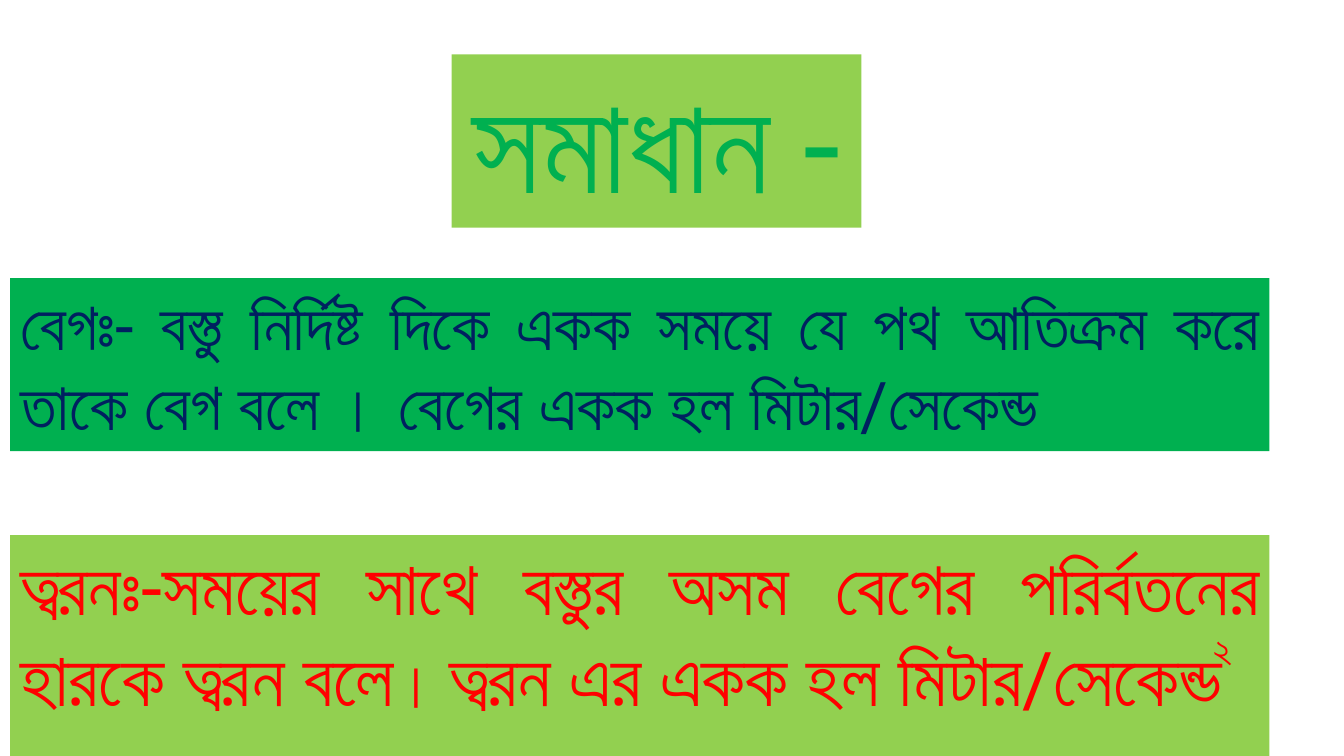
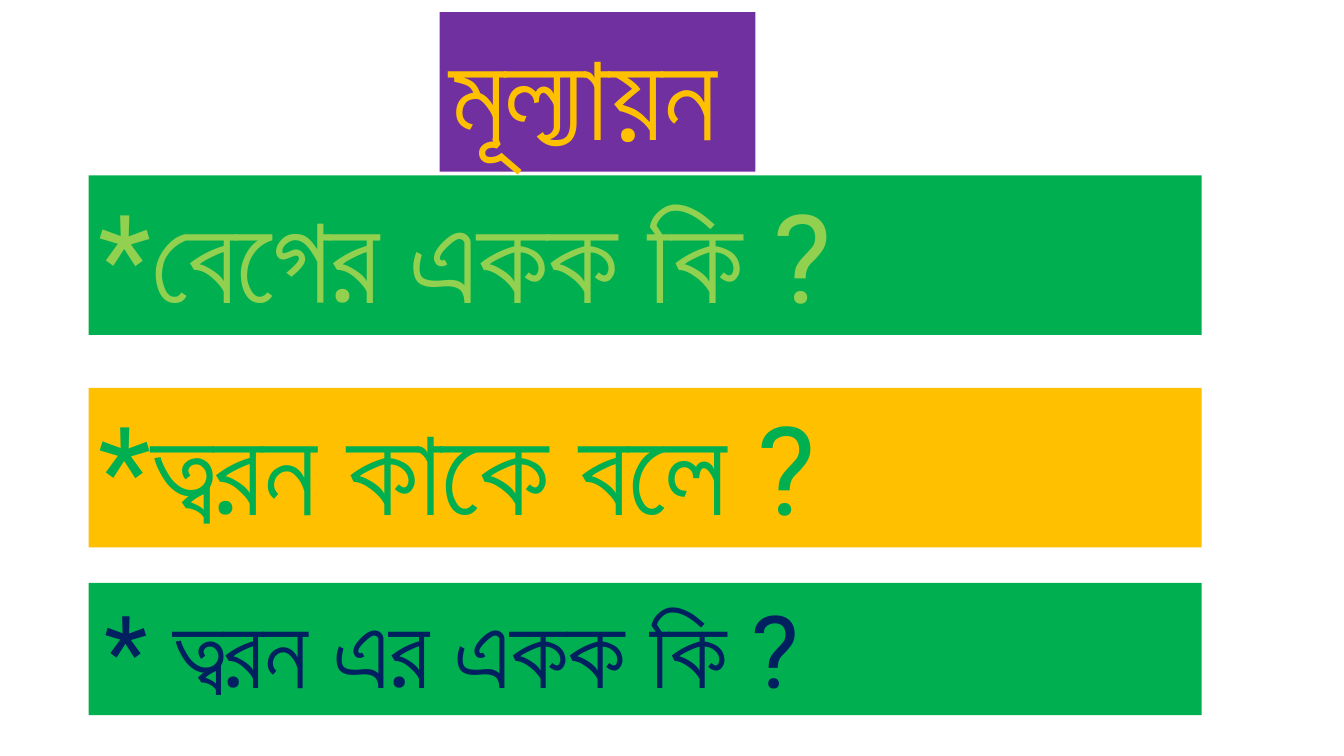
from pptx import Presentation
from pptx.dml.color import RGBColor
from pptx.enum.shapes import MSO_SHAPE
from pptx.enum.text import MSO_ANCHOR, MSO_AUTO_SIZE, PP_ALIGN
from pptx.util import Inches, Pt

RECT = MSO_SHAPE.RECTANGLE
TOP = MSO_ANCHOR.TOP
FIXED = MSO_AUTO_SIZE.NONE
LEFT, MID, FULL = PP_ALIGN.LEFT, PP_ALIGN.CENTER, PP_ALIGN.JUSTIFY

WIDE, HIGH = Inches(13.33), Inches(7.5)
FONT = "Roboto"
TITLE_ONLY = 5
HEX = {
    "lime": "92D050", "green": "00B050", "navy": "002060",
    "red": "FF0000", "plum": "7030A0", "gold": "FFC000",
}


def color(name):
    return RGBColor.from_string(HEX[name])


def area(left, top, width, height):
    """Turn percentages of the slide into lengths."""
    return (int(WIDE * left / 100), int(HIGH * top / 100),
            int(WIDE * width / 100), int(HIGH * height / 100))


def paint(shape, name):
    shape.fill.solid()
    shape.fill.fore_color.rgb = color(name)


def write(shape, parts, ink, align=LEFT, wrap=True, inset=0.1):
    """Fill a shape with one paragraph made of (text, size) parts."""
    frame = shape.text_frame
    frame.auto_size = FIXED
    frame.word_wrap = wrap
    frame.vertical_anchor = TOP
    frame.margin_left, frame.margin_right = Inches(inset), Inches(0.1)
    frame.margin_top = frame.margin_bottom = Inches(0.05)
    para = frame.paragraphs[0]
    para.alignment = align
    para.line_spacing = 1.0
    para.space_before = Pt(0)
    para.font.name = FONT
    para.font.color.rgb = color(ink)
    para.font.size = Pt(parts[0][1])
    for text, size in parts:
        run = para.add_run()
        run.text = text
        if size != parts[0][1]:
            run.font.size = Pt(size)


def head(deck, text, size, box, fill, ink, align):
    """Start a slide with a filled title."""
    slide = deck.slides.add_slide(deck.slide_layouts[TITLE_ONLY])
    title = slide.shapes.title
    title.left, title.top, title.width, title.height = area(*box)
    paint(title, fill)
    write(title, [(text, size)], ink, align, wrap=False)
    return slide


def band(slide, parts, box, fill, ink, align=LEFT, inset=0.1):
    """Add a filled bar of text."""
    shape = slide.shapes.add_shape(RECT, *area(*box))
    shape.shadow.inherit = False
    shape.line.fill.background()
    paint(shape, fill)
    write(shape, parts, ink, align, inset=inset)


def label(slide, text, size, box, ink):
    write(slide.shapes.add_textbox(*area(*box)), [(text, size)], ink)


def answers(deck):
    slide = head(deck, "সমাধান -", 96, (33.6, 7.2, 30.5, 22.9),
                 "lime", "green", MID)
    left, width = 0.75, 93.7

    # Velocity
    speed = ("বেগঃ- বস্তু নির্দিষ্ট দিকে একক সময়ে যে পথ আতিক্রম করে "
             "তাকে বেগ বলে । বেগের একক হল মিটার/সেকেন্ড")
    band(slide, [(speed, 48)], (left, 36.8, width, 22.9),
         "green", "navy", FULL)

    # Acceleration, with the exponent of its unit
    parts = [
        ("ত্বরনঃ-সময়ের সাথে বস্তুর অসম বেগের পরির্বতনের হারকে ত্বরন বলে", 54),
        ("।", 48), (" ", 28),
        ("ত্বরন এর একক হল মিটার/সেকেন্ড", 54),
    ]
    band(slide, parts, (left, 70.8, width, 29.2), "lime", "red", FULL)
    label(slide, "২", 28, (89.5, 81.9, 3.2, 7.6), "red")


def quiz(deck):
    slide = head(deck, "মূল্যায়ন", 88, (32.7, 1.6, 23.5, 21.1),
                 "plum", "gold", LEFT)

    # Questions: text, size, top, height, fill, ink, inset
    rows = [
        ("*বেগের একক কি ?", 88, 23.2, 21.1, "green", "lime", 0.1),
        ("*ত্বরন কাকে বলে ?", 88, 51.3, 21.1, "gold", "green", 0.1),
        ("* ত্বরন এর একক কি ?", 72, 77.1, 17.5, "green", "navy", 0.16),
    ]
    for text, size, top, height, fill, ink, inset in rows:
        band(slide, [(text, size)], (6.6, top, 82.8, height),
             fill, ink, inset=inset)


def main():
    deck = Presentation()
    deck.slide_width, deck.slide_height = WIDE, HIGH
    answers(deck)
    quiz(deck)
    deck.save("out.pptx")


if __name__ == "__main__":
    main()
